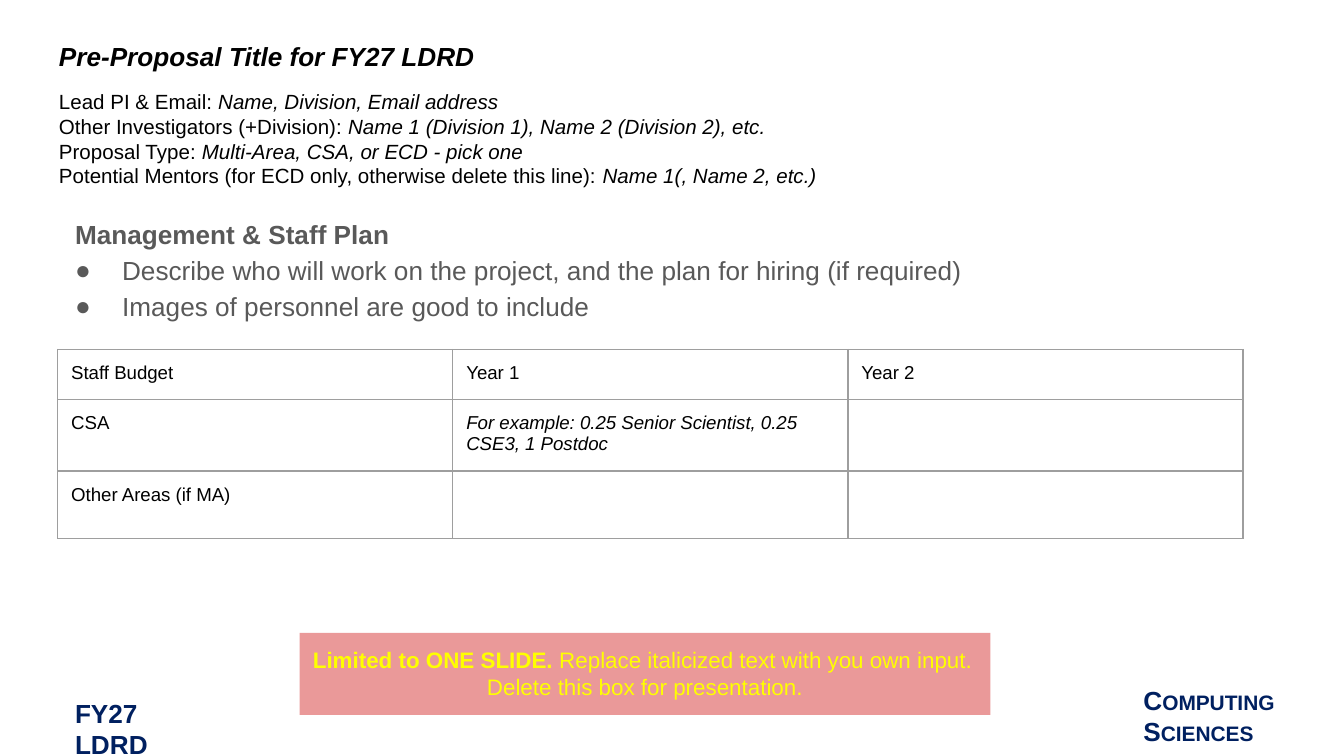
from dataclasses import dataclass

from lxml.etree import SubElement
from pptx import Presentation
from pptx.dml.color import RGBColor
from pptx.enum.shapes import MSO_SHAPE
from pptx.enum.text import MSO_ANCHOR, PP_ALIGN
from pptx.oxml import parse_xml
from pptx.oxml.ns import nsdecls, qn
from pptx.util import Inches, Pt


@dataclass(frozen=True)
class Theme:
    font: str = "Arial"
    black: str = "000000"
    gray: str = "595959"
    navy: str = "002060"
    yellow: str = "FFFF00"
    pink: str = "EA9999"
    border: str = "9E9E9E"
    heading: int = 14
    banner: int = 12
    detail: int = 11
    cell: int = 10


theme = Theme()


def add_run(paragraph, text, size, color, bold=False, italic=False, small_caps=False):
    run = paragraph.add_run()
    run.text = text
    run.font.name = theme.font
    run.font.size = Pt(size)
    run.font.bold = bold
    run.font.italic = italic
    run.font.color.rgb = RGBColor.from_string(color)
    if small_caps:
        run.font._element.set("cap", "small")


def add_text_box(slide, left, top, width, height, vertical_inset=0.1):
    frame = slide.shapes.add_textbox(
        Inches(left), Inches(top), Inches(width), Inches(height)
    ).text_frame
    frame.word_wrap = True
    frame.margin_left = frame.margin_right = Inches(0.1)
    frame.margin_top = frame.margin_bottom = Inches(vertical_inset)
    return frame


presentation = Presentation()
presentation.slide_width = Inches(10)
presentation.slide_height = Inches(10) * 9 // 16
slide = presentation.slides.add_slide(presentation.slide_layouts[6])

unit_label = add_text_box(slide, 8.41, 5.04, 1.6, 0.57, vertical_inset=0.05)
add_run(unit_label.paragraphs[0], "Computing Sciences", theme.heading, theme.navy,
        bold=True, small_caps=True)
program_label = add_text_box(slide, 0.46, 5.14, 1.25, 0.34, vertical_inset=0.05)
add_run(program_label.paragraphs[0], "FY27 LDRD", theme.heading, theme.navy, bold=True)

title = add_text_box(slide, 0.34, 0.2, 9.32, 1.3)
add_run(title.paragraphs[0], "Pre-Proposal Title for FY27 LDRD", theme.heading, theme.black,
        bold=True, italic=True)
details = [
    ("Lead PI & Email: ", "Name, Division, Email address"),
    ("Other Investigators (+Division): ", "Name 1 (Division 1), Name 2 (Division 2), etc."),
    ("Proposal Type: ", "Multi-Area, CSA, or ECD - pick one"),
    ("Potential Mentors (for ECD only, otherwise delete this line): ", "Name 1(, Name 2, etc.)"),
]
for label, value in details:
    paragraph = title.add_paragraph()
    add_run(paragraph, label, theme.detail, theme.black)
    add_run(paragraph, value, theme.detail, theme.black, italic=True)
title.paragraphs[1].space_before = Pt(9.5)

plan = add_text_box(slide, 0.31, 1.49, 9.32, 0.99)
heading = plan.paragraphs[0]
heading.line_spacing = 1.15
heading._p.get_or_add_pPr().set("marL", str(Inches(0.15)))
add_run(heading, "Management & Staff Plan", theme.heading, theme.gray, bold=True)
for text in [
    "Describe who will work on the project, and the plan for hiring (if required)",
    "Images of personnel are good to include",
]:
    paragraph = plan.add_paragraph()
    paragraph.line_spacing = 1.15
    properties = paragraph._p.get_or_add_pPr()
    properties.set("marL", str(Inches(0.5)))
    properties.set("indent", str(Inches(-0.35)))
    bullet_color = SubElement(properties, qn("a:buClr"))
    SubElement(bullet_color, qn("a:srgbClr"), val=theme.gray)
    SubElement(properties, qn("a:buFont"), typeface=theme.font)
    SubElement(properties, qn("a:buChar"), char="●")
    add_run(paragraph, text, theme.heading, theme.gray)

banner = slide.shapes.add_shape(
    MSO_SHAPE.RECTANGLE, Inches(2.23), Inches(4.71), Inches(5.14), Inches(0.61)
)
banner.shadow.inherit = False
banner.fill.solid()
banner.fill.fore_color.rgb = RGBColor.from_string(theme.pink)
banner.line.fill.background()
frame = banner.text_frame
frame.word_wrap = True
frame.vertical_anchor = MSO_ANCHOR.TOP
frame.margin_left = frame.margin_right = Inches(0.1)
frame.margin_top = frame.margin_bottom = Inches(0.1)
notice = frame.paragraphs[0]
notice.alignment = PP_ALIGN.LEFT
add_run(notice, "Limited to ONE SLIDE.", theme.banner, theme.yellow, bold=True)
add_run(notice, " Replace italicized text with you own input.", theme.banner, theme.yellow)
reminder = frame.add_paragraph()
reminder.alignment = PP_ALIGN.CENTER
add_run(reminder, "Delete this box for presentation.", theme.banner, theme.yellow)

budget = [
    ["Staff Budget", "Year 1", "Year 2"],
    ["CSA", "For example: 0.25 Senior Scientist, 0.25 CSE3, 1 Postdoc", ""],
    ["Other Areas (if MA)", "", ""],
]
row_heights = [0.37, 0.53, 0.5]
table = slide.shapes.add_table(
    3, 3, Inches(0.43), Inches(2.6), Inches(8.82), Inches(sum(row_heights))
).table
table.first_row = False
table.horz_banding = False
for column in table.columns:
    column.width = Inches(2.94)
for row, height, texts in zip(table.rows, row_heights, budget):
    row.height = Inches(height)
    for cell, text in zip(row.cells, texts):
        cell.margin_left = cell.margin_right = Inches(0.1)
        cell.margin_top = cell.margin_bottom = Inches(0.1)
        properties = cell._tc.get_or_add_tcPr()
        for side in ["lnL", "lnR", "lnT", "lnB"]:
            properties.append(parse_xml(
                f'<a:{side} {nsdecls("a")} w="{Pt(0.75)}"><a:solidFill>'
                f'<a:srgbClr val="{theme.border}"/></a:solidFill></a:{side}>'
            ))
        cell.fill.background()
        if text:
            add_run(cell.text_frame.paragraphs[0], text, theme.cell, theme.black,
                    italic=text.startswith("For example"))

presentation.save("out.pptx")
